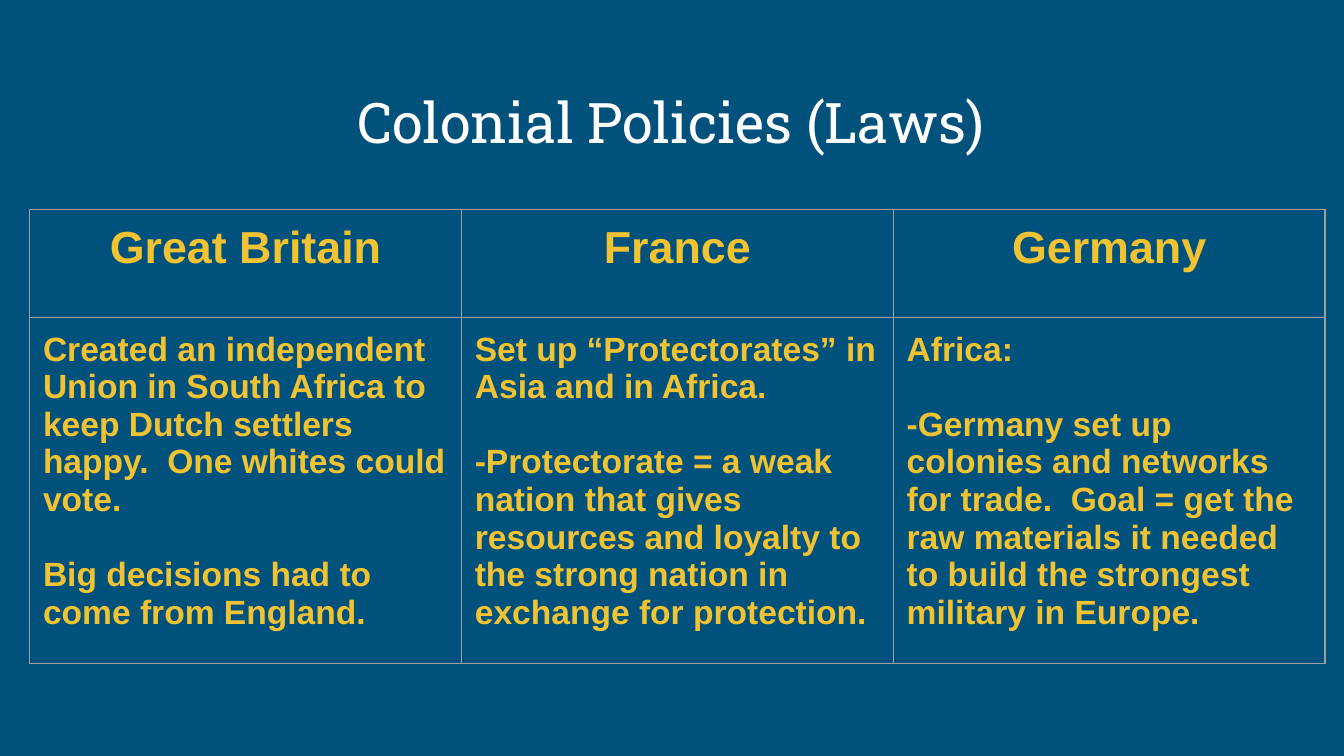
import pptx
import pptx.util
import pptx.dml.color
import pptx.enum.text
import pptx.oxml
import pptx.oxml.ns
from lxml import etree

TITLE = "Colonial Policies (Laws)"
LANDS = [
    ("Great Britain", [
        "Created an independent Union in South Africa to keep Dutch settlers happy.  One whites could vote.",
        "Big decisions had to come from England."]),
    ("France", [
        "Set up “Protectorates” in Asia and in Africa.",
        "-Protectorate = a weak nation that gives resources and loyalty to the strong nation in exchange for protection."]),
    ("Germany", [
        "Africa:",
        "-Germany set up colonies and networks for trade.  Goal = get the raw materials it needed to build the strongest military in Europe."]),
]
THEME = {
    "back": "00517C", "white": "FFFFFF", "gold": "F1C232", "line": "9E9E9E",
    "slab": "Roboto Slab", "sans": "Arial",
    "title": 30, "head": 24, "body": 18, "gap": 20.1, "rule": 0.75,
}
LEFT, TOP, WIDTH = 0.22, 1.56, 9.64
ROWS = [0.8, 2.43]

Inches, Pt = pptx.util.Inches, pptx.util.Pt
ALIGN = pptx.enum.text.PP_ALIGN


def color(name):
    return pptx.dml.color.RGBColor.from_string(THEME[name])


def style(part, size, face, tint, bold, align):
    part.alignment = align
    for run in part.runs:
        run.font.size = Pt(THEME[size])
        run.font.name = THEME[face]
        run.font.color.rgb = color(tint)
        run.font.bold = bold


def pad(box):
    box.margin_left = box.margin_right = Inches(0.1)
    box.margin_top = box.margin_bottom = Inches(0.1)


def border(cell):
    props = cell._tc.get_or_add_tcPr()
    for place, side in enumerate(("lnL", "lnR", "lnT", "lnB")):
        line = etree.Element(pptx.oxml.ns.qn("a:" + side), w=str(Pt(THEME["rule"])))
        fill = etree.SubElement(line, pptx.oxml.ns.qn("a:solidFill"))
        etree.SubElement(fill, pptx.oxml.ns.qn("a:srgbClr"), val=THEME["line"])
        props.insert(place, line)


def fill(cell, texts, size, align):
    pad(cell)
    cell.fill.background()
    border(cell)
    cell.text_frame.text = "\n".join(texts)
    parts = cell.text_frame.paragraphs
    for part in parts:
        style(part, size, "sans", "gold", True, align)
    for part in parts[:-1]:
        part.space_after = Pt(THEME["gap"])


def main():
    deck = pptx.Presentation()
    deck.slide_width = Inches(10)
    deck.slide_height = deck.slide_width * 9 // 16
    slide = deck.slides.add_slide(deck.slide_layouts[6])
    slide.background.fill.solid()
    slide.background.fill.fore_color.rgb = color("back")

    title = slide.shapes.add_textbox(Inches(0.42), Inches(0.5), Inches(9.15), Inches(0.75))
    frame = title.text_frame
    frame.word_wrap = True
    frame.vertical_anchor = pptx.enum.text.MSO_ANCHOR.BOTTOM
    pad(frame)
    frame.text = TITLE
    style(frame.paragraphs[0], "title", "slab", "white", False, ALIGN.CENTER)

    table = slide.shapes.add_table(
        len(ROWS), len(LANDS), Inches(LEFT), Inches(TOP),
        Inches(WIDTH), Inches(sum(ROWS))).table
    table.first_row = table.horz_banding = False
    for row, height in zip(table.rows, ROWS):
        row.height = Inches(height)
    for col, (land, notes) in enumerate(LANDS):
        table.columns[col].width = Inches(WIDTH / len(LANDS))
        fill(table.cell(0, col), [land], "head", ALIGN.CENTER)
        fill(table.cell(1, col), notes, "body", ALIGN.LEFT)

    deck.save("out.pptx")


if __name__ == "__main__":
    main()
